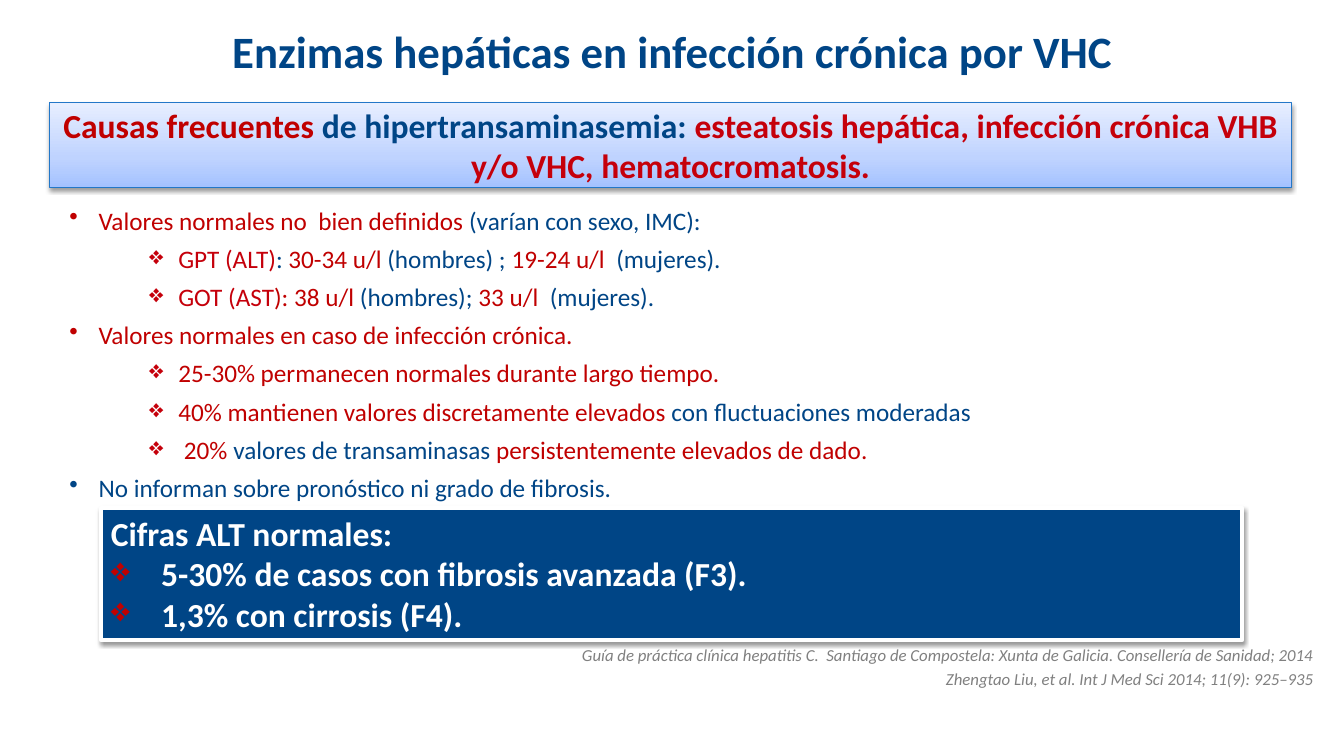
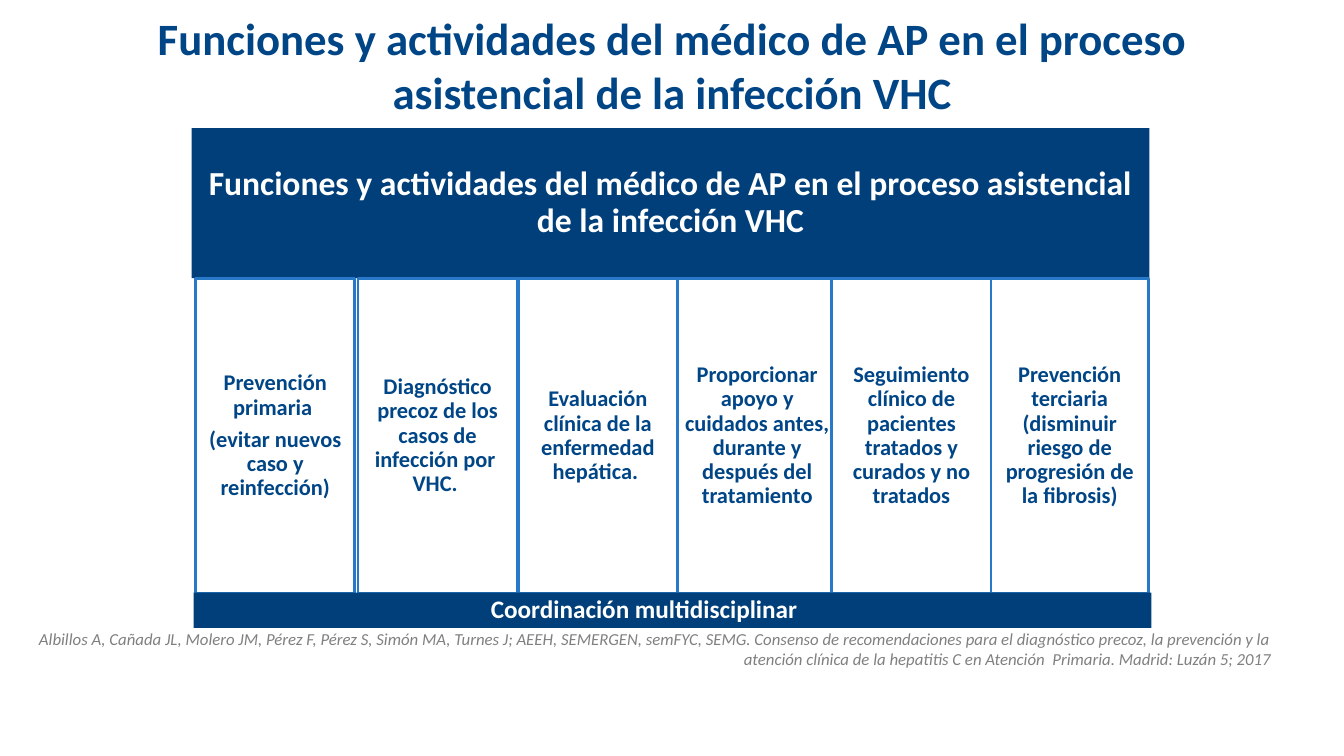
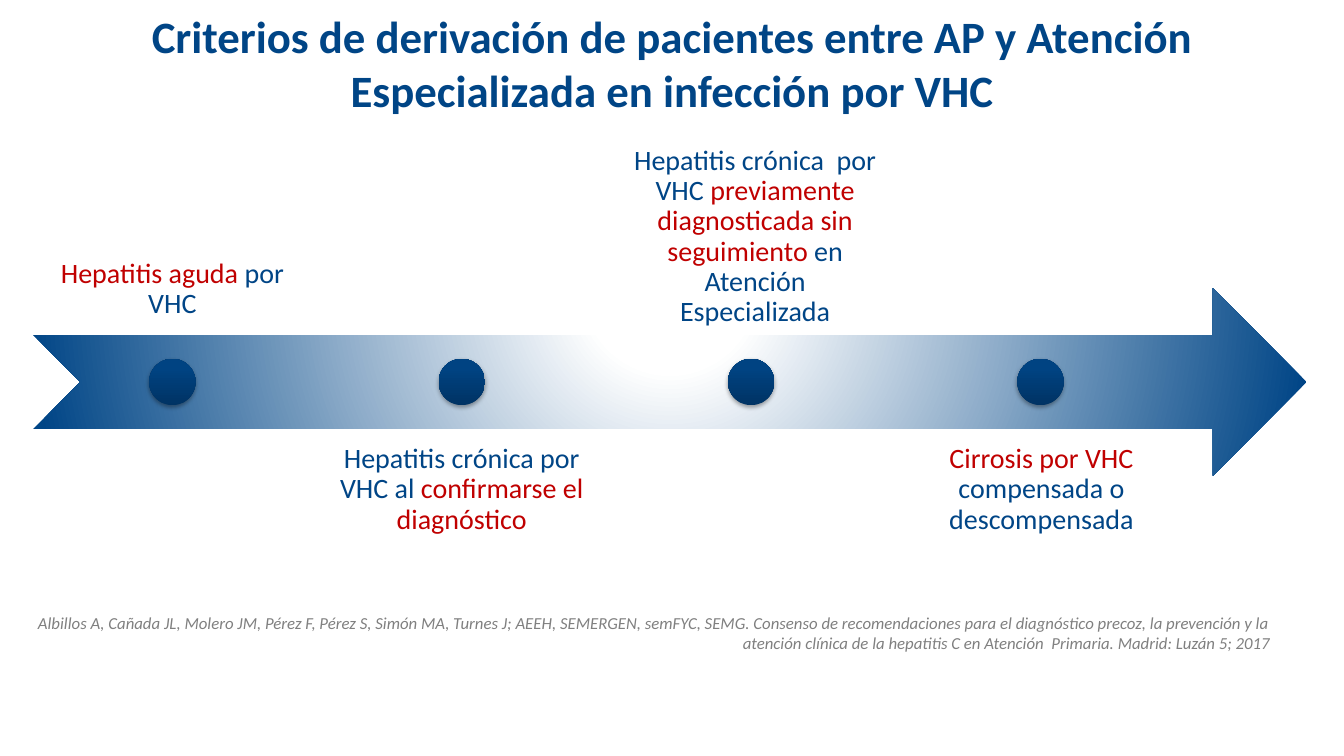
from dataclasses import dataclass
from typing import NamedTuple

from lxml.etree import SubElement
from pptx import Presentation
from pptx.dml.color import RGBColor
from pptx.enum.shapes import MSO_SHAPE as Preset
from pptx.enum.text import MSO_ANCHOR as Anchor, PP_ALIGN as Align
from pptx.oxml.ns import qn
from pptx.util import Inches, Pt


@dataclass(frozen=True)
class Theme:
    font: str = "Calibri"
    navy: str = "004586"
    band: str = "003F7A"
    red: str = "C00000"
    crimson: str = "C5000B"
    white: str = "FFFFFF"
    gray: str = "808080"
    outline: str = "2377C8"
    pillar_line: str = "287AC8"
    pale_blues: tuple = ((0, "A4C2FF"), (35, "BFD3FF"), (100, "E7EEFF"))
    dot_blues: tuple = ((0, "003364"), (80, "004382"), (100, "004382"))
    arrow_blues: tuple = ((0, "FFFFFF"), (13, "FFFFFF"), (100, "004586"))
    title: int = 32
    heading: int = 24
    label: int = 20
    body: int = 18
    pillar: int = 16
    source: int = 12


THEME = Theme()


class Area(NamedTuple):
    left: float
    top: float
    width: float
    height: float


class Span(NamedTuple):
    text: str
    color: str = THEME.navy


class Bullet(NamedTuple):
    mark: str
    margin: float
    hanging: float
    color: str | None = None
    level: int = 0


@dataclass(frozen=True)
class Para:
    spans: tuple[Span, ...]
    bullet: Bullet | None = None


@dataclass(frozen=True)
class Style:
    size: int
    bold: bool = False
    italic: bool = False
    align: Align = Align.LEFT
    anchor: Anchor = Anchor.TOP
    line_spacing: float | None = None
    gap: float = 0
    inset: float | None = None
    wrap: bool = True


@dataclass(frozen=True)
class Pillar:
    left: float
    lines: tuple[str, ...]
    width: float = 1.58


@dataclass(frozen=True)
class Milestone:
    left: float
    top: float
    anchor: Anchor
    spans: tuple[Span, ...]


TITLE = Style(THEME.title, bold=True, align=Align.CENTER, anchor=Anchor.MIDDLE)
SOURCE = Style(THEME.source, italic=True, align=Align.RIGHT, gap=2.4)
BODY = Style(THEME.body, anchor=Anchor.MIDDLE, gap=5.7)
BANNER = Style(THEME.heading, bold=True, align=Align.CENTER, anchor=Anchor.MIDDLE)
CALLOUT = Style(THEME.heading, bold=True)
HEADER = Style(THEME.heading, bold=True, align=Align.CENTER,
               anchor=Anchor.MIDDLE, line_spacing=0.9, inset=0.1)
PILLAR = Style(THEME.pillar, bold=True, align=Align.CENTER,
               anchor=Anchor.MIDDLE, line_spacing=0.9, gap=5.6, inset=0.07)
COORDINATION = Style(THEME.body, bold=True, wrap=False)

DOT = Bullet("•", 0.88, 0.29)
DIAMOND = Bullet("❖", 1.67, 0.29, THEME.crimson, level=1)
CALLOUT_DIAMOND = Bullet("❖", 0.5, 0.5, THEME.red)

CONSENSUS = (
    "Albillos A, Cañada JL, Molero JM, Pérez F, Pérez S, Simón MA, Turnes J; "
    "AEEH, SEMERGEN, semFYC, SEMG. Consenso de recomendaciones para el "
    "diagnóstico precoz, la prevención y la atención clínica de la hepatitis C "
    "en Atención  Primaria. Madrid: Luzán 5; 2017"
)


# Shared drawing helpers
def plain(*texts: str, color: str = THEME.navy) -> list[Para]:
    return [Para((Span(text, color),)) for text in texts]


def add_bullet(paragraph, bullet: Bullet) -> None:
    paragraph.level = bullet.level
    properties = paragraph._p.get_or_add_pPr()
    properties.set("marL", str(Inches(bullet.margin)))
    properties.set("indent", str(-Inches(bullet.hanging)))
    if bullet.color:
        color = SubElement(properties, qn("a:buClr"))
        SubElement(color, qn("a:srgbClr"), val=bullet.color)
    SubElement(properties, qn("a:buChar"), char=bullet.mark)


def write(shape, paras: list[Para], style: Style) -> None:
    frame = shape.text_frame
    frame.word_wrap = style.wrap
    frame.vertical_anchor = style.anchor
    if style.inset is not None:
        frame.margin_left = frame.margin_right = Inches(style.inset)
        frame.margin_top = frame.margin_bottom = Inches(style.inset)
    for index, para in enumerate(paras):
        paragraph = frame.add_paragraph() if index else frame.paragraphs[0]
        if para.bullet:
            add_bullet(paragraph, para.bullet)
        paragraph.alignment = style.align
        if style.line_spacing:
            paragraph.line_spacing = style.line_spacing
        if index:
            paragraph.space_before = Pt(style.gap)
        for span in para.spans:
            run = paragraph.add_run()
            run.text = span.text
            run.font.name = THEME.font
            run.font.size = Pt(style.size)
            run.font.bold = style.bold
            run.font.italic = style.italic
            run.font.color.rgb = RGBColor.from_string(span.color)


def add_text(page, area: Area, paras: list[Para], style: Style) -> None:
    box = page.shapes.add_textbox(*map(Inches, area))
    write(box, paras, style)


def add_preset(page, preset: Preset, area: Area, fill: str | None = None,
               line: str | None = None, line_width: float = 0):
    shape = page.shapes.add_shape(preset, *map(Inches, area))
    shape.shadow.inherit = False
    if fill:
        shape.fill.solid()
        shape.fill.fore_color.rgb = RGBColor.from_string(fill)
    if line:
        shape.line.color.rgb = RGBColor.from_string(line)
        shape.line.width = Pt(line_width)
    else:
        shape.line.fill.background()
    return shape


def set_gradient(shape, stops: tuple, radial: bool = False) -> None:
    """Fill upwards, or outwards from a centre above the shape."""
    shape.fill.gradient()
    gradient = shape._element.spPr.find(qn("a:gradFill"))
    for child in list(gradient):
        gradient.remove(child)
    stop_list = SubElement(gradient, qn("a:gsLst"))
    for position, color in stops:
        stop = SubElement(stop_list, qn("a:gs"), pos=str(position * 1000))
        SubElement(stop, qn("a:srgbClr"), val=color)
    if radial:
        circle = SubElement(gradient, qn("a:path"), path="circle")
        SubElement(circle, qn("a:fillToRect"),
                   l="50000", t="-80000", r="50000", b="180000")
    else:
        SubElement(gradient, qn("a:lin"), ang="16200000", scaled="0")


def add_shadow(shape, opacity: int, distance: float) -> None:
    effects = shape._element.spPr.find(qn("a:effectLst"))
    shadow = SubElement(effects, qn("a:outerShdw"), blurRad=str(Pt(3.1)),
                        dist=str(Pt(distance)), dir="5400000", rotWithShape="0")
    color = SubElement(shadow, qn("a:srgbClr"), val="000000")
    SubElement(color, qn("a:alpha"), val=str(opacity * 1000))


def start_page(deck, title: str, title_area: Area,
               sources: tuple[str, ...], source_area: Area):
    page = deck.slides.add_slide(deck.slide_layouts[6])
    add_text(page, title_area, plain(title), TITLE)
    add_text(page, source_area, plain(*sources, color=THEME.gray), SOURCE)
    return page


# Slide 1: liver enzymes
FINDINGS = [
    Para((Span("Valores normales no  bien definidos ", THEME.red),
          Span("(varían con sexo, IMC):")), DOT),
    Para((Span("GPT (ALT)", THEME.crimson), Span(": "),
          Span("30-34 u/l ", THEME.red), Span("(hombres) ; "),
          Span("19-24 u/l  ", THEME.red), Span("(mujeres).")), DIAMOND),
    Para((Span("GOT (AST", THEME.crimson), Span("): 38 u/l ", THEME.red),
          Span("(hombres); "), Span("33 u/l  ", THEME.red),
          Span("(mujeres).")), DIAMOND),
    Para((Span("Valores normales en caso de infección crónica.", THEME.red),), DOT),
    Para((Span("25-30% permanecen normales durante largo tiempo.", THEME.red),),
         DIAMOND),
    Para((Span("40% mantienen valores discretamente elevados ", THEME.red),
          Span("con fluctuaciones moderadas")), DIAMOND),
    Para((Span(" 20% ", THEME.red), Span("valores de transaminasas "),
          Span("persistentemente elevados de dado.", THEME.red)), DIAMOND),
    Para((Span("No informan sobre pronóstico ni grado de fibrosis."),), DOT),
]
CAUSES = [Para((
    Span("Causas frecuentes ", THEME.red),
    Span("de hipertransaminasemia: "),
    Span("esteatosis hepática, infección crónica VHB y/o VHC, hematocromatosis.",
         THEME.crimson),
))]
NORMAL_ALT = [
    Para((Span("Cifras ALT normales:", THEME.white),)),
    Para((Span("5-30% de casos con fibrosis avanzada (F3).", THEME.white),),
         CALLOUT_DIAMOND),
    Para((Span("1,3% con cirrosis (F4).", THEME.white),), CALLOUT_DIAMOND),
]


def draw_enzymes(deck) -> None:
    page = start_page(
        deck, "Enzimas hepáticas en infección crónica por VHC",
        Area(0.67, 0.17, 12, 0.66),
        ("Guía de práctica clínica hepatitis C.  Santiago de Compostela: "
         "Xunta de Galicia. Consellería de Sanidad; 2014",
         "Zhengtao Liu, et al. Int J Med Sci 2014; 11(9): 925–935"),
        Area(0.46, 6.35, 12.67, 0.6))
    add_text(page, Area(0, 1.38, 13.19, 4.26), FINDINGS, BODY)

    callout = add_preset(page, Preset.RECTANGLE, Area(1, 5.04, 11.32, 1.31),
                         THEME.navy, THEME.white, 3)
    add_shadow(callout, 38, 1.6)
    write(callout, NORMAL_ALT, CALLOUT)

    banner = add_preset(page, Preset.RECTANGLE, Area(0.49, 1.02, 12.32, 0.84),
                        line=THEME.outline, line_width=0.75)
    set_gradient(banner, THEME.pale_blues)
    add_shadow(banner, 38, 1.6)
    write(banner, CAUSES, BANNER)


# Slide 2: functions of primary care
FUNCTIONS = ("Funciones y actividades del médico de AP en el proceso "
             "asistencial de la infección VHC")
PILLARS = (
    Pillar(1.94, ("Prevención primaria ", "(evitar nuevos caso y reinfección)")),
    Pillar(3.55, ("Diagnóstico precoz de los casos de infección por  VHC. ",)),
    Pillar(5.14, ("Evaluación clínica de la enfermedad hepática. ",)),
    Pillar(6.72, ("Proporcionar apoyo y cuidados antes, durante y después "
                  "del tratamiento",)),
    Pillar(8.25, ("Seguimiento clínico de pacientes tratados y curados "
                  "y no tratados",)),
    Pillar(9.83, ("Prevención terciaria (disminuir riesgo de progresión "
                  "de la fibrosis)",), 1.56),
)


def draw_functions(deck) -> None:
    page = start_page(deck, FUNCTIONS, Area(0.67, 0.04, 12, 1.2),
                      (CONSENSUS,), Area(0.04, 6.19, 12.67, 0.6))
    header = add_preset(page, Preset.RECTANGLE, Area(1.9, 1.27, 9.5, 1.49),
                        THEME.band)
    write(header, plain(FUNCTIONS, color=THEME.white), HEADER)
    for pillar in PILLARS:
        column = add_preset(page, Preset.RECTANGLE,
                            Area(pillar.left, 2.76, pillar.width, 3.13),
                            THEME.white, THEME.pillar_line, 2)
        write(column, plain(*pillar.lines), PILLAR)
    add_preset(page, Preset.RECTANGLE, Area(1.92, 5.88, 9.5, 0.35), THEME.band)
    add_text(page, Area(4.77, 5.84, 3.26, 0.4),
             plain("Coordinación multidisciplinar", color=THEME.white),
             COORDINATION)


# Slide 3: referral criteria
MILESTONES = (
    Milestone(0.34, 1.47, Anchor.BOTTOM,
              (Span("Hepatitis aguda ", THEME.red), Span("por VHC"))),
    Milestone(3.21, 4.25, Anchor.TOP,
              (Span("Hepatitis crónica por VHC al "),
               Span("confirmarse el diagnóstico", THEME.red))),
    Milestone(6.12, 1.55, Anchor.BOTTOM,
              (Span("Hepatitis crónica  por VHC "),
               Span("previamente diagnosticada sin seguimiento", THEME.red),
               Span(" en Atención Especializada"))),
    Milestone(8.96, 4.25, Anchor.TOP,
              (Span("Cirrosis por VHC ", THEME.red),
               Span("compensada o descompensada"))),
)
FIRST_DOT, DOT_STEP, DOT_SIZE = 1.48, 2.87, 0.46


def draw_referral(deck) -> None:
    page = start_page(
        deck, "Criterios de derivación de pacientes entre AP y Atención "
        "Especializada en infección por VHC",
        Area(0.67, 0.02, 12, 1.2), (CONSENSUS,), Area(0.03, 6.03, 12.67, 0.58))
    arrow = add_preset(page, Preset.NOTCHED_RIGHT_ARROW,
                       Area(0.33, 2.86, 12.63, 1.86))
    set_gradient(arrow, THEME.arrow_blues, radial=True)
    for index, milestone in enumerate(MILESTONES):
        style = Style(THEME.label, align=Align.CENTER, anchor=milestone.anchor,
                      line_spacing=0.9, inset=0.16)
        add_text(page, Area(milestone.left, milestone.top, 2.74, 1.86),
                 [Para(milestone.spans)], style)
        dot = add_preset(page, Preset.OVAL,
                         Area(FIRST_DOT + index * DOT_STEP, 3.56,
                              DOT_SIZE, DOT_SIZE))
        set_gradient(dot, THEME.dot_blues)
        add_shadow(dot, 35, 1.8)


def main() -> None:
    deck = Presentation()
    deck.slide_width, deck.slide_height = Inches(13.33), Inches(7.5)
    draw_enzymes(deck)
    draw_functions(deck)
    draw_referral(deck)
    deck.save("out.pptx")


if __name__ == "__main__":
    main()
